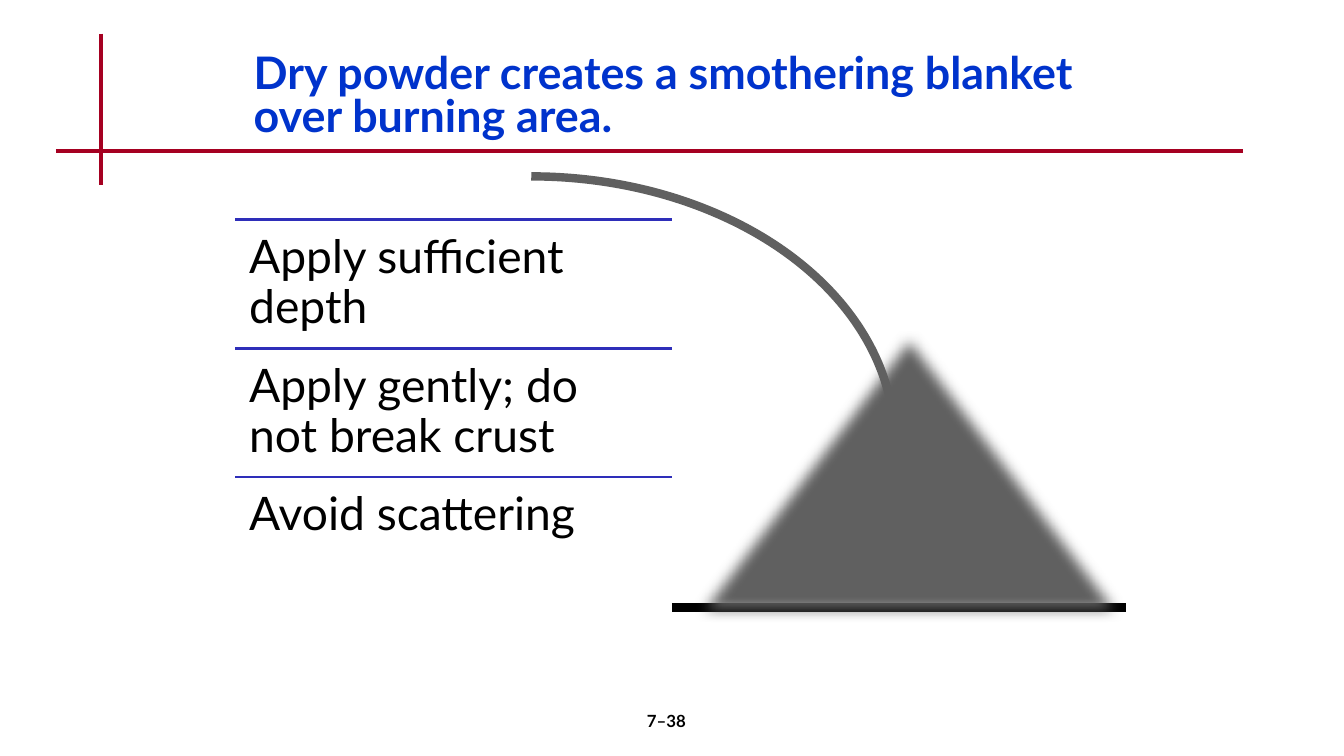
"""Builds the slide on applying dry powder to a burning area."""
from lxml import etree
from pptx import Presentation
from pptx.dml.color import RGBColor
from pptx.enum.shapes import MSO_CONNECTOR, MSO_SHAPE
from pptx.enum.text import MSO_ANCHOR, MSO_AUTO_SIZE, PP_ALIGN
from pptx.oxml.ns import qn
from pptx.util import Pt

STRAIGHT = MSO_CONNECTOR.STRAIGHT
ARC, TRIANGLE = MSO_SHAPE.ARC, MSO_SHAPE.ISOSCELES_TRIANGLE
TOP, NO_FIT = MSO_ANCHOR.TOP, MSO_AUTO_SIZE.NONE
LEFT, CENTER = PP_ALIGN.LEFT, PP_ALIGN.CENTER

BLACK = RGBColor(0x00, 0x00, 0x00)
TITLE_BLUE = RGBColor(0x00, 0x33, 0xCC)
DIVIDER_BLUE = RGBColor(0x2E, 0x2E, 0xB9)
RULE_RED = RGBColor(0xA5, 0x00, 0x21)
POWDER_GREY = RGBColor(0x60, 0x60, 0x60)

TITLE = "Dry powder creates a smothering blanket over burning area."
STEPS = ["Apply sufficient depth", "Apply gently; do not break crust", "Avoid scattering"]
PAGE_NUMBER = "7–38"

TITLE_BOX = (174, 36, 612, 72)
PAGE_BOX = (376, 504, 200, 36)
RED_RULES = [(72, 24, 72, 132), (40, 108, 888, 108)]
GROUND = (480, 434, 804, 434)
STREAM_BOX = (120, 126, 519, 379)
STREAM_ANGLES = (162, 0.45)
PILE_BOX = (480, 222, 339, 223)
PILE_SOFTNESS = 10
STEP_LEFT, STEP_TOP, STEP_WIDTH, STEP_HEIGHT = 168, 156.75, 312, 92

TITLE_FONT = {"name": "Lato", "size": Pt(32), "bold": True}
STEP_FONT = {"name": "Lato", "size": Pt(33), "bold": False}
PAGE_FONT = {"name": "Lato", "size": Pt(12), "bold": True}


def points(values):
    return [Pt(value) for value in values]


def add_line(slide, ends, color, width):
    line = slide.shapes.add_connector(STRAIGHT, *points(ends))
    line.line.color.rgb = color
    line.line.width = Pt(width)
    etree.SubElement(line._element.spPr, qn("a:effectLst"))


def write(shape, text, font, color, spacing=1.0, align=LEFT, inset=None):
    frame = shape.text_frame
    frame.text = text
    frame.word_wrap = True
    frame.auto_size = NO_FIT
    frame.vertical_anchor = TOP
    if inset is not None:
        for side in ("left", "top", "right", "bottom"):
            setattr(frame, f"margin_{side}", Pt(inset))
    paragraph = frame.paragraphs[0]
    paragraph.alignment = align
    paragraph.line_spacing = spacing
    for name, value in font.items():
        setattr(paragraph.font, name, value)
    paragraph.font.color.rgb = color


def add_title(slide):
    title = slide.shapes.title
    title.left, title.top, title.width, title.height = points(TITLE_BOX)
    write(title, TITLE, TITLE_FONT, TITLE_BLUE, spacing=0.8)


def add_stream(slide):
    stream = slide.shapes.add_shape(ARC, *points(STREAM_BOX))
    stream.shadow.inherit = False
    stream.adjustments[0], stream.adjustments[1] = STREAM_ANGLES
    stream.fill.background()
    stream.line.color.rgb = POWDER_GREY
    stream.line.width = Pt(6)


def add_steps(slide):
    for row, step in enumerate(STEPS):
        top = STEP_TOP + row * STEP_HEIGHT
        add_line(slide, (STEP_LEFT, top, STEP_LEFT + STEP_WIDTH, top), DIVIDER_BLUE, 2)
        box = slide.shapes.add_textbox(*points((STEP_LEFT, top, STEP_WIDTH, STEP_HEIGHT)))
        write(box, step, STEP_FONT, BLACK, spacing=0.9, inset=10)


def add_pile(slide):
    pile = slide.shapes.add_shape(TRIANGLE, *points(PILE_BOX))
    pile.shadow.inherit = False
    pile.fill.solid()
    pile.fill.fore_color.rgb = POWDER_GREY
    pile.line.fill.background()
    effects = pile._element.spPr.find(qn("a:effectLst"))
    etree.SubElement(effects, qn("a:softEdge"), rad=str(Pt(PILE_SOFTNESS)))


def main():
    presentation = Presentation()
    presentation.slide_width, presentation.slide_height = Pt(960), Pt(540)
    slide = presentation.slides.add_slide(presentation.slide_layouts[5])
    for ends in RED_RULES:
        add_line(slide, ends, RULE_RED, 3)
    add_title(slide)
    page = slide.shapes.add_textbox(*points(PAGE_BOX))
    write(page, PAGE_NUMBER, PAGE_FONT, BLACK, align=CENTER)
    add_stream(slide)
    add_line(slide, GROUND, BLACK, 6)
    add_steps(slide)
    add_pile(slide)
    presentation.save("out.pptx")


if __name__ == "__main__":
    main()
